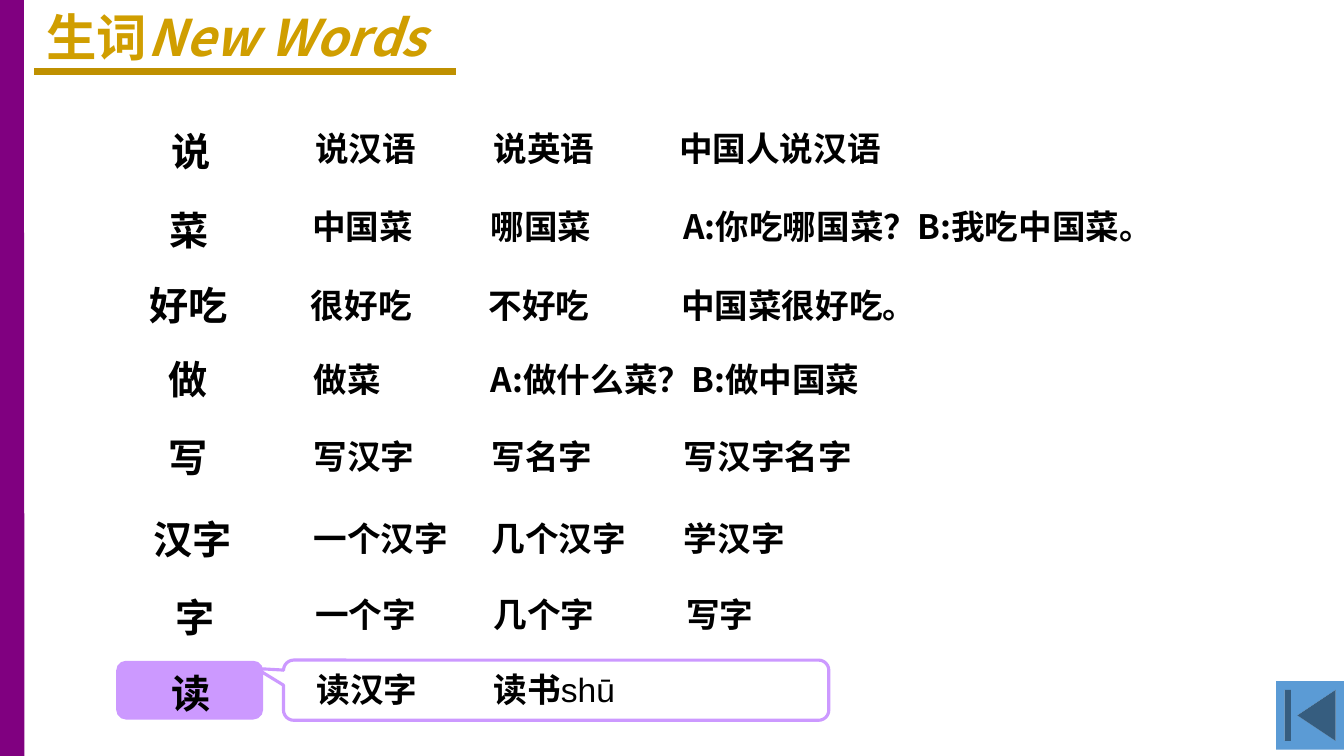
from dataclasses import dataclass

from lxml.etree import SubElement
from pptx import Presentation
from pptx.dml.color import RGBColor
from pptx.enum.shapes import MSO_CONNECTOR, MSO_SHAPE as SHAPE
from pptx.enum.text import MSO_ANCHOR, MSO_AUTO_SIZE, PP_ALIGN as ALIGN
from pptx.oxml.ns import qn
from pptx.util import Pt


@dataclass(frozen=True)
class Theme:
    gold: str = "D09E00"
    dark_gold: str = "BF9000"
    purple: str = "800080"
    lilac: str = "CC99FF"
    blue: str = "5B9BD5"
    white: str = "FFFFFF"
    black: str = "000000"
    title_size: int = 36
    head_size: int = 28
    phrase_size: int = 24
    chinese_font: str = "Noto Sans CJK SC"
    head_font: str = "Calibri"
    pinyin_font: str = "Arial"


THEME = Theme()

# Headword, its centre and top, top of the phrases, then (left, width, phrase).
WORDS = [
    ("说", 136.5, 87.5, 88,
     [(218, 87, "说汉语"), (345.5, 246, "说英语"), (478, 246, "中国人说汉语")]),
    ("菜", 135, 143.5, 143.5,
     [(216, 87, "中国菜"), (343.5, 246, "哪国菜"),
      (481, 364, "A:你吃哪国菜？B:我吃中国菜。")]),
    ("好吃", 135, 197.5, 200,
     [(215, 87, "很好吃"), (342, 246, "不好吃"), (479.5, 246, "中国菜很好吃。")]),
    ("做", 134.5, 250, 253,
     [(217, 87, "做菜"), (343.5, 347, "A:做什么菜？B:做中国菜")]),
    ("写", 134.5, 306, 307.5,
     [(217, 87, "写汉字"), (344, 246, "写名字"), (481.5, 246, "写汉字名字")]),
    ("汉字", 137.5, 364.5, 366.5,
     [(217, 112, "一个汉字"), (344, 246, "几个汉字"), (481.5, 246, "学汉字")]),
    ("字", 139, 420.5, 420.5,
     [(218, 87, "一个字"), (345.5, 220, "几个字"), (483, 246, "写字")]),
    ("读", 136.5, 474.5, 474.5,
     [(219, 87, "读汉字"), (345.5, 220, "读书")]),
]


def add_span(para, text, size=THEME.phrase_size, font=THEME.chinese_font,
             color=THEME.black, bold=True, italic=False):
    span = para.add_run()
    span.text = text
    span.font.size = Pt(size)
    span.font.name = font
    span.font.bold = bold
    span.font.italic = italic
    span.font.color.rgb = RGBColor.from_string(color)


def add_text(page, text, left, top, width, height, align=ALIGN.LEFT, **style):
    """Add a text box and return its paragraph."""
    box = page.shapes.add_textbox(Pt(left), Pt(top), Pt(width), Pt(height))
    box.text_frame.word_wrap = True
    para = box.text_frame.paragraphs[0]
    para.alignment = align
    para._p.get_or_add_pPr().set("hangingPunct", "0")
    add_span(para, text, **style)
    return para


def add_shape(page, kind, left, top, width, height, fill,
              line=None, adjustments=()):
    shape = page.shapes.add_shape(kind, Pt(left), Pt(top), Pt(width), Pt(height))
    shape.shadow.inherit = False
    shape.fill.solid()
    shape.fill.fore_color.rgb = RGBColor.from_string(fill)
    if line:
        shape.line.color.rgb = RGBColor.from_string(line)
        shape.line.width = Pt(2.25)
    else:
        shape.line.fill.background()
    for index, value in enumerate(adjustments):
        shape.adjustments[index] = value


def add_line(page, start, end, color, weight):
    line = page.shapes.add_connector(
        MSO_CONNECTOR.STRAIGHT, *(Pt(value) for value in (*start, *end)))
    line.line.color.rgb = RGBColor.from_string(color)
    line.line.width = Pt(weight)
    SubElement(line._element.spPr, qn("a:effectLst"))


def set_title(page):
    title = page.shapes.title
    title.left, title.top, title.width, title.height = (
        Pt(value) for value in (26, 0.5, 360, 51))
    frame = title.text_frame
    frame.word_wrap = False
    frame.auto_size = MSO_AUTO_SIZE.NONE
    frame.vertical_anchor = MSO_ANCHOR.TOP
    para = frame.paragraphs[0]
    para.alignment = ALIGN.LEFT
    style = {"size": THEME.title_size, "color": THEME.gold}
    add_span(para, "生词", **style)
    add_span(para, "New Words", italic=True, **style)


def add_words(page):
    for head, centre, head_top, phrase_top, phrases in WORDS:
        add_text(page, head, centre - 36, head_top, 72, 41, align=ALIGN.CENTER,
                 size=THEME.head_size, font=THEME.head_font)
        for left, width, phrase in phrases:
            para = add_text(page, phrase, left, phrase_top, width, 36.5)
    add_span(para, "shū", font=THEME.pinyin_font, bold=False)


def main():
    deck = Presentation()
    deck.slide_width, deck.slide_height = Pt(960), Pt(540)
    page = deck.slides.add_slide(deck.slide_layouts[5])
    set_title(page)
    add_shape(page, SHAPE.ROUNDED_RECTANGULAR_CALLOUT, 202.5, 471.5, 389.5, 43,
              THEME.white, line=THEME.lilac, adjustments=(-0.55, -0.36, 0.17))
    add_line(page, (8.5, 540), (8, -1.5), THEME.purple, 18)
    add_shape(page, SHAPE.ROUNDED_RECTANGLE, 83, 472, 105, 42, THEME.lilac)
    add_line(page, (24.5, 51), (326, 51), THEME.dark_gold, 5.5)
    add_words(page)
    add_shape(page, SHAPE.ACTION_BUTTON_BEGINNING, 911.5, 486.5, 48.5, 49,
              THEME.blue)
    deck.save("out.pptx")


if __name__ == "__main__":
    main()
